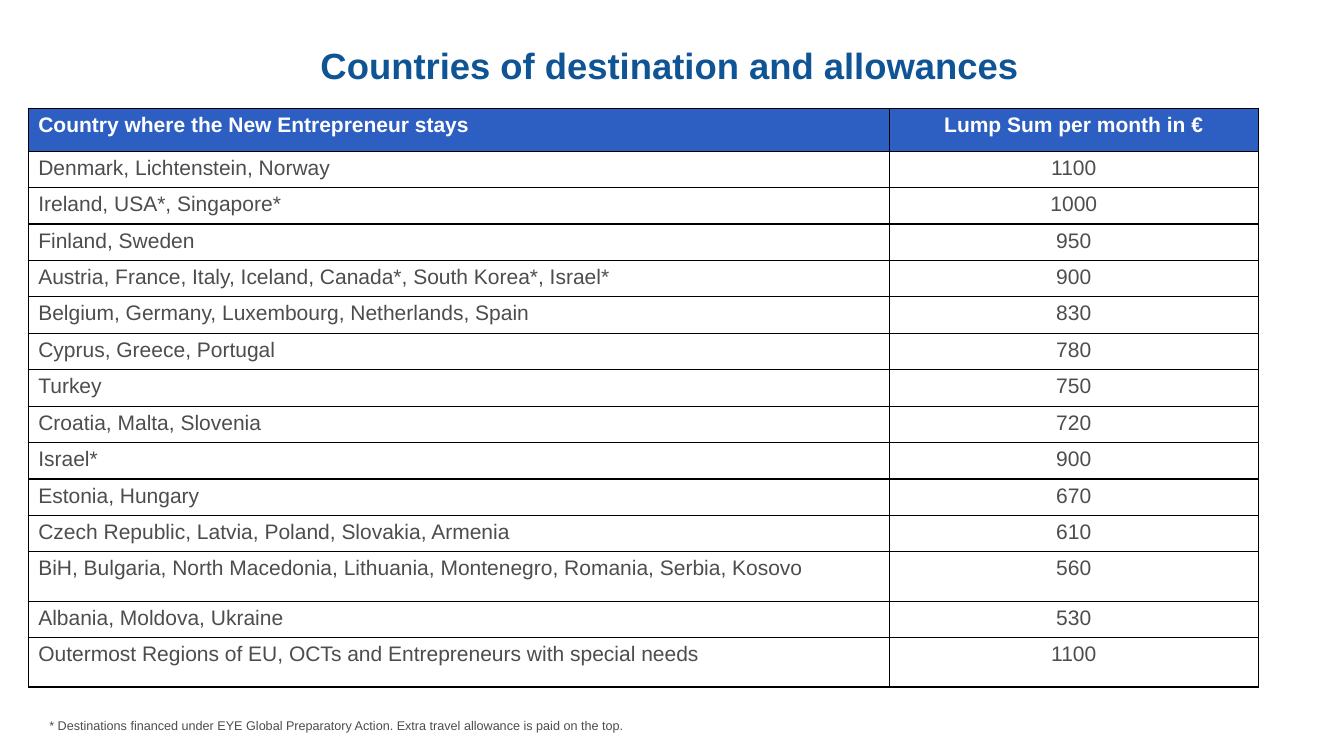
from lxml import etree
from pptx import Presentation
from pptx.dml.color import RGBColor
from pptx.enum import text
from pptx.oxml import ns
from pptx.util import Inches, Pt

COLOURS = {"title": "0F5494", "header": "2D5EC1", "white": "FFFFFF",
           "body": "4D4D4D", "border": "000000"}

ALLOWANCES = [
    ("Country where the New Entrepreneur stays", "Lump Sum per month in €"),
    ("Denmark, Lichtenstein, Norway", "1100"),
    ("Ireland, USA*, Singapore*", "1000"),
    ("Finland, Sweden", "950"),
    ("Austria, France, Italy, Iceland, Canada*, South Korea*, Israel*", "900"),
    ("Belgium, Germany, Luxembourg, Netherlands, Spain", "830"),
    ("Cyprus, Greece, Portugal", "780"),
    ("Turkey", "750"),
    ("Croatia, Malta, Slovenia", "720"),
    ("Israel*", "900"),
    ("Estonia, Hungary", "670"),
    ("Czech Republic, Latvia, Poland, Slovakia, Armenia", "610"),
    ("BiH, Bulgaria, North Macedonia, Lithuania, Montenegro, Romania, Serbia, Kosovo", "560"),
    ("Albania, Moldova, Ukraine", "530"),
    ("Outermost Regions of EU, OCTs and Entrepreneurs with special needs", "1100"),
]
TABLE_HEIGHT = 5.74
TALL_ROWS = {0: 0.42, 12: 0.49, 14: 0.49}
ROW_HEIGHT = (TABLE_HEIGHT - sum(TALL_ROWS.values())) / (len(ALLOWANCES) - len(TALL_ROWS))


def write(frame, words, size, colour, align, bold=False):
    para = frame.paragraphs[0]
    para.text = words
    para.alignment = align
    para.font.name = "Arial"
    para.font.size = Pt(size)
    para.font.bold = bold
    para.font.color.rgb = RGBColor.from_string(COLOURS[colour])


def add_borders(cell):
    properties = cell._tc.get_or_add_tcPr()
    for side in ("a:lnL", "a:lnR", "a:lnT", "a:lnB"):
        line = etree.SubElement(properties, ns.qn(side), w=str(Pt(1)))
        fill = etree.SubElement(line, ns.qn("a:solidFill"))
        etree.SubElement(fill, ns.qn("a:srgbClr"), val=COLOURS["border"])


deck = Presentation()
deck.slide_width, deck.slide_height = Inches(13.33), Inches(7.5)
page = deck.slides.add_slide(deck.slide_layouts[6])

table = page.shapes.add_table(len(ALLOWANCES), 2, Inches(0.28), Inches(1.08),
                              Inches(12.2), Inches(TABLE_HEIGHT)).table
table.horz_banding = False
table.columns[0].width = Inches(8.54)
table.columns[1].width = Inches(3.66)

for row, entry in enumerate(ALLOWANCES):
    table.rows[row].height = Inches(TALL_ROWS.get(row, ROW_HEIGHT))
    is_header = row == 0
    for column, words in enumerate(entry):
        cell = table.cell(row, column)
        add_borders(cell)
        if is_header:
            cell.fill.solid()
            cell.fill.fore_color.rgb = RGBColor.from_string(COLOURS["header"])
        else:
            cell.fill.background()
        align = text.PP_ALIGN.CENTER if column else text.PP_ALIGN.JUSTIFY
        write(cell.text_frame, words, 15, "white" if is_header else "body", align, is_header)

title = page.shapes.add_textbox(Inches(3.03), Inches(0.29), Inches(7.18), Inches(0.71)).text_frame
title.word_wrap = True
title.vertical_anchor = text.MSO_ANCHOR.MIDDLE
write(title, "Countries of destination and allowances", 26, "title", text.PP_ALIGN.RIGHT, True)

footnote = page.shapes.add_textbox(Inches(0.39), Inches(7.07), Inches(8.15), Inches(0.25)).text_frame
footnote.word_wrap = True
footnote.auto_size = text.MSO_AUTO_SIZE.SHAPE_TO_FIT_TEXT
write(footnote, "* Destinations financed under EYE Global Preparatory Action. "
      "Extra travel allowance is paid on the top.", 9, "body", text.PP_ALIGN.LEFT)

deck.save("out.pptx")
